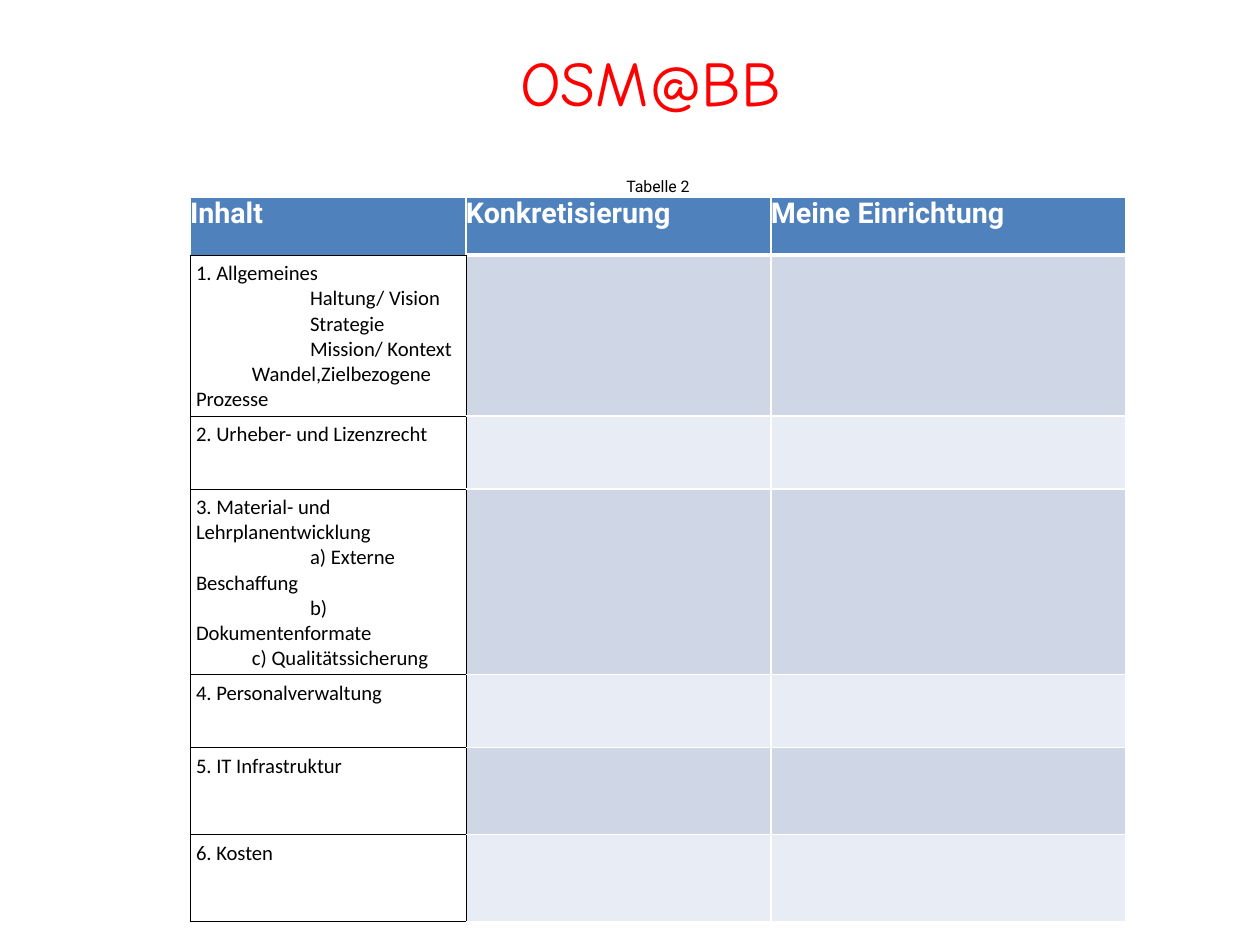
"""Build the OSM@BB slide with its three-column planning table."""
from lxml.etree import SubElement
from pptx import Presentation
from pptx.dml.color import RGBColor
from pptx.enum.text import MSO_ANCHOR as Anchor, MSO_AUTO_SIZE as AutoSize, PP_ALIGN as Align
from pptx.oxml.ns import qn
from pptx.util import Emu, Pt

EMU_PER_PX = 7993
WHITE, BLACK, RED, HEADER_BLUE = "FFFFFF", "000000", "FF0000", "4F81BD"
BANDS = ["CFD7E7", "E8ECF4"]
COLUMN_WIDTHS = [276, 305, 355]
ROW_HEIGHTS = [19, 58, 160, 73, 160, 73, 87, 87]
HEADINGS = ["Inhalt", "Konkretisierung", "Meine Einrichtung"]
NEAR, FAR = 56, 114
TOPICS = [
    [("1. Allgemeines", 0), ("Haltung/ Vision", FAR), ("Strategie", FAR),
     ("Mission/ Kontext", FAR), ("Wandel,Zielbezogene Prozesse", NEAR)],
    [("2. Urheber- und Lizenzrecht", 0)],
    [("3. Material- und Lehrplanentwicklung", 0), ("a) Externe Beschaffung", FAR),
     ("b) Dokumentenformate", FAR), ("c) Qualitätssicherung", NEAR)],
    [("4. Personalverwaltung", 0)],
    [("5. IT Infrastruktur", 0)],
    [("6. Kosten", 0)],
]
THIN_WHITE, THICK_WHITE, THIN_BLACK = (WHITE, 1), (WHITE, 3), (BLACK, 0.5)


def px(length):
    """Turn px into EMU."""
    return Emu(length * EMU_PER_PX)


def rgb(color):
    """Turn a hex string into a colour."""
    return RGBColor.from_string(color)


def write(paragraph, text, font, size, color, bold=False):
    """Add one formatted run to a paragraph."""
    run = paragraph.add_run()
    run.text = text
    run.font.name, run.font.size, run.font.bold = font, Pt(size), bold
    run.font.color.rgb = rgb(color)


def set_margins(box, margin):
    """Give a cell or text frame the same margin on every side."""
    box.margin_left = box.margin_right = px(margin)
    box.margin_top = box.margin_bottom = px(margin)


def style_cell(cell, fill, left=THIN_WHITE, right=THIN_WHITE, top=THIN_WHITE, bottom=THIN_WHITE):
    """Set the borders and the fill of a cell."""
    properties = cell._tc.get_or_add_tcPr()
    borders = {"a:lnL": left, "a:lnR": right, "a:lnT": top, "a:lnB": bottom}
    for tag, (color, width) in borders.items():
        line = SubElement(properties, qn(tag), w=str(Pt(width)))
        SubElement(SubElement(line, qn("a:solidFill")), qn("a:srgbClr"), val=color)
    if fill:
        cell.fill.solid()
        cell.fill.fore_color.rgb = rgb(fill)
    else:
        cell.fill.background()


def add_title(slide, text):
    """Place and write the slide title."""
    title = slide.shapes.title
    title.left, title.top, title.width, title.height = map(px, (340, 41, 621, 80))
    frame = title.text_frame
    set_margins(frame, 0)
    frame.word_wrap = True
    frame.auto_size = AutoSize.SHAPE_TO_FIT_TEXT
    frame.vertical_anchor = Anchor.MIDDLE
    paragraph = frame.paragraphs[0]
    paragraph.alignment = Align.CENTER
    write(paragraph, text, "Comic Neue", 40, RED)


def fill_caption(table):
    """Write the caption across the top row."""
    caption = table.cell(0, 0)
    caption.merge(table.cell(0, len(COLUMN_WIDTHS) - 1))
    for cell in table.rows[0].cells:
        set_margins(cell, 0)
        style_cell(cell, None)
    caption.vertical_anchor = Anchor.MIDDLE
    paragraph = caption.text_frame.paragraphs[0]
    paragraph.alignment = Align.CENTER
    write(paragraph, "Tabelle 2", "Roboto", 10, BLACK)


def fill_headings(table):
    """Write the column headings."""
    for column, heading in enumerate(HEADINGS):
        cell = table.cell(1, column)
        set_margins(cell, 0)
        style_cell(cell, HEADER_BLUE, bottom=THICK_WHITE if column else THIN_BLACK)
        write(cell.text_frame.paragraphs[0], heading, "Roboto", 18, WHITE, True)


def fill_topic(cell, lines):
    """Write a topic and its first-line indented points."""
    set_margins(cell, 6)
    style_cell(cell, None, *[THIN_BLACK] * 4)
    frame = cell.text_frame
    for number, (text, indent) in enumerate(lines):
        paragraph = frame.add_paragraph() if number else frame.paragraphs[0]
        properties = paragraph._p.get_or_add_pPr()
        properties.set("marL", "0")
        properties.set("indent", str(px(indent)))
        write(paragraph, text, "Calibri", 13, BLACK)


def add_planning_table(slide):
    """Build the table of topics with two open columns."""
    table = slide.shapes.add_table(
        len(ROW_HEIGHTS), len(COLUMN_WIDTHS), px(190), px(178),
        px(sum(COLUMN_WIDTHS)), px(sum(ROW_HEIGHTS))).table
    table.first_row = table.horz_banding = False
    for column, width in zip(table.columns, COLUMN_WIDTHS):
        column.width = px(width)
    for row, height in zip(table.rows, ROW_HEIGHTS):
        row.height = px(height)
    fill_caption(table)
    fill_headings(table)
    for index, lines in enumerate(TOPICS):
        topic, detail, own = table.rows[index + 2].cells
        band = BANDS[index % 2]
        top = THIN_WHITE if index else THICK_WHITE
        fill_topic(topic, lines)
        style_cell(detail, band, left=THIN_BLACK, top=top)
        style_cell(own, band, top=top)


def main():
    """Build and save the presentation."""
    deck = Presentation()
    deck.slide_width, deck.slide_height = px(1260), px(945)
    slide = deck.slides.add_slide(deck.slide_layouts[5])
    add_planning_table(slide)
    add_title(slide, "OSM@BB")
    deck.save("out.pptx")


if __name__ == "__main__":
    main()
